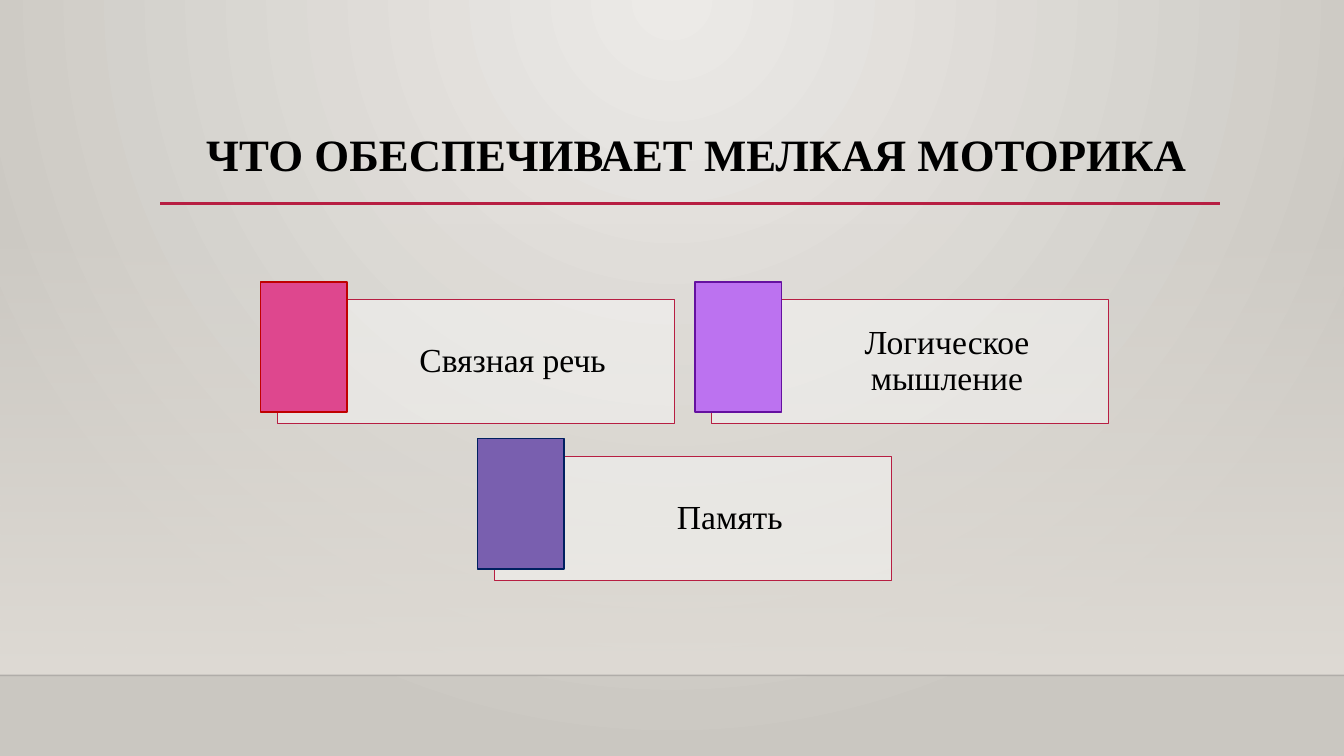
from lxml import etree
from pptx import Presentation
from pptx import util as u
from pptx.dml.color import RGBColor
from pptx.enum import shapes, text
from pptx.oxml.ns import qn

Pt = u.Pt


def rgb(hex_colour):
    return RGBColor.from_string(hex_colour)


def write(shape, words, size, bold=False, anchor=text.MSO_ANCHOR.TOP,
          insets=(7.2, 3.6, 7.2, 3.6)):
    """Fill a shape with one centred paragraph; insets run left, top, right, bottom."""
    frame = shape.text_frame
    frame.word_wrap = True
    frame.vertical_anchor = anchor
    (frame.margin_left, frame.margin_top,
     frame.margin_right, frame.margin_bottom) = map(Pt, insets)
    paragraph = frame.paragraphs[0]
    paragraph.alignment = text.PP_ALIGN.CENTER
    paragraph.line_spacing = 0.9
    run = paragraph.add_run()
    run.text = words
    run.font.name = "Times New Roman"
    run.font.size = Pt(size)
    run.font.bold = bold
    run.font.color.rgb = rgb("000000")


WIDTH, HEIGHT = 960, 540
FLOOR = 482.4

prs = Presentation()
prs.slide_width, prs.slide_height = Pt(WIDTH), Pt(HEIGHT)
slide = prs.slides.add_slide(prs.slide_layouts[6])
translucent = []  # colour elements with their opacity in percent

# Background: radial light from the top centre
backdrop = slide.background.fill
backdrop.gradient()
for stop, colour in zip(backdrop.gradient_stops, ("ECEAE7", "CAC7C1")):
    stop.color.rgb = rgb(colour)
radial = slide.element.find(".//" + qn("a:gradFill"))
radial.remove(radial.find(qn("a:lin")))
circle = etree.SubElement(radial, qn("a:path"), path="circle")
etree.SubElement(circle, qn("a:fillToRect"), l="43000", t="0", r="43000", b="100000")

# Wall that fades in towards the floor
wall = slide.shapes.add_shape(shapes.MSO_SHAPE.RECTANGLE,
                              Pt(0), Pt(159.1), Pt(WIDTH), Pt(FLOOR - 159.1))
wall.shadow.inherit = False
wall.line.fill.background()
wall.fill.gradient()
wall.fill.gradient_angle = 270
for stop in wall.fill.gradient_stops:
    stop.color.rgb = rgb("DFDBD5")
translucent.append((wall.element.spPr.find(".//" + qn("a:srgbClr")), 0))

# Floor edge and title rule
for left, right, y, colour, weight, opacity in (
        (0, WIDTH, FLOOR, "000001", 1, 20),
        (114.5, 871.2, 145.4, "B71E42", 2.5, 100)):
    rule = slide.shapes.add_connector(shapes.MSO_CONNECTOR.STRAIGHT,
                                      Pt(left), Pt(y), Pt(right), Pt(y))
    rule.line.color.rgb = rgb(colour)
    rule.line.width = Pt(weight)
    etree.SubElement(rule.element.spPr, qn("a:effectLst"))
    if opacity < 100:
        translucent.append((rule.element.spPr.find(".//" + qn("a:srgbClr")), opacity))

title = slide.shapes.add_textbox(Pt(119.5), Pt(91.4), Pt(756), Pt(82.8))
write(title, "ЧТО ОБЕСПЕЧИВАЕТ МЕЛКАЯ МОТОРИКА", 32, bold=True)

# Cards: two in the first row, one centred below, each with a colour tile
for words, column, row, tile_fill, tile_edge in (
        ("Связная речь", 0, 0, "DE478E", "C00000"),
        ("Логическое мышление", 1, 0, "BC72F0", "6511A0"),
        ("Память", 0.5, 1, "795FAF", "002060")):
    x, y = 198 + 310.3 * column, 214.2 + 111.8 * row
    card = slide.shapes.add_shape(shapes.MSO_SHAPE.RECTANGLE,
                                  Pt(x), Pt(y), Pt(283.6), Pt(88.6))
    tile = slide.shapes.add_shape(shapes.MSO_SHAPE.RECTANGLE,
                                  Pt(x - 12), Pt(y - 12.8), Pt(62), Pt(93))
    for part, fill, edge, weight in ((card, "FFFFFF", "B71E42", 0.75),
                                     (tile, tile_fill, tile_edge, 1.25)):
        part.shadow.inherit = False
        part.fill.solid()
        part.fill.fore_color.rgb = rgb(fill)
        part.line.color.rgb = rgb(edge)
        part.line.width = Pt(weight)
    translucent.append((card.element.spPr.find(".//" + qn("a:srgbClr")), 40))
    write(card, words, 24, anchor=text.MSO_ANCHOR.MIDDLE, insets=(59.8, 7.2, 7.2, 7.2))

for colour, opacity in translucent:
    etree.SubElement(colour, qn("a:alpha"), val=str(opacity * 1000))

prs.save("out.pptx")
